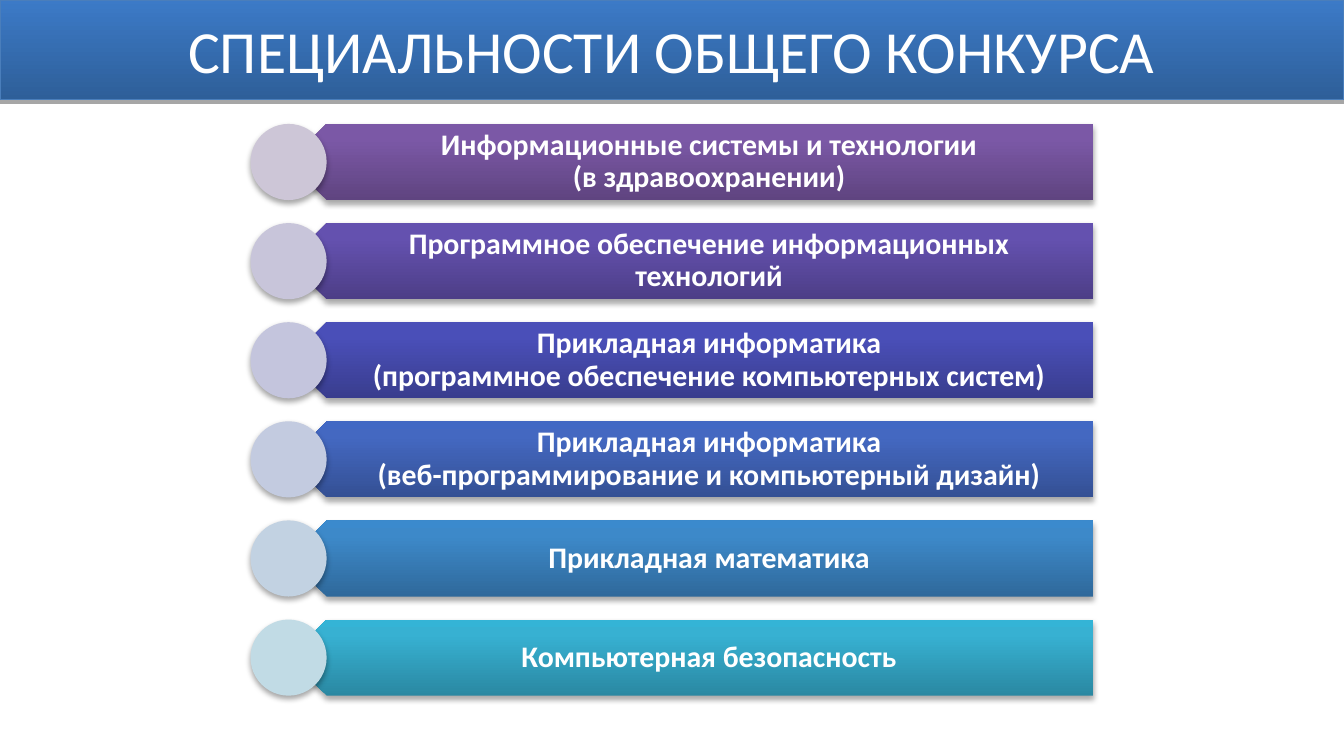
from copy import deepcopy
from dataclasses import dataclass

from lxml import etree
from pptx import Presentation
from pptx.dml.color import RGBColor
from pptx.enum.shapes import MSO_SHAPE
from pptx.enum.text import MSO_ANCHOR, MSO_AUTO_SIZE, PP_ALIGN
from pptx.oxml.ns import qn
from pptx.util import Pt

PENTAGON = MSO_SHAPE.PENTAGON
OVAL = MSO_SHAPE.OVAL
MIDDLE = MSO_ANCHOR.MIDDLE
CENTER = PP_ALIGN.CENTER
NO_AUTOFIT = MSO_AUTO_SIZE.NONE

SLIDE_WIDTH, SLIDE_HEIGHT = 720, 405
HEADER_HEIGHT = 53.5
FIRST_TOP, ROW_PITCH, ROW_HEIGHT = 66.4, 53.1, 40.8
CIRCLE_LEFT = 134.2
BAR_LEFT, BAR_RIGHT = CIRCLE_LEFT + ROW_HEIGHT / 2, 585.5
LABEL_LEFT = BAR_LEFT + ROW_HEIGHT / 4


@dataclass(frozen=True)
class Specialty:
    label: str
    gradient: tuple[tuple[int, str], ...]
    circle: str


SPECIALTIES = [
    Specialty("Информационные системы и технологии\n(в здравоохранении)",
              ((0, "5F4480"), (80, "7B58A6"), (100, "7C57A8")), "CDC6D7"),
    Specialty("Программное обеспечение информационных технологий",
              ((0, "4D3E87"), (80, "6451AF"), (100, "6450B2")), "C8C5DA"),
    Specialty("Прикладная информатика\n(программное обеспечение компьютерных систем)",
              ((0, "393D8E"), (80, "4A4FB8"), (100, "484EBB")), "C4C5DD"),
    Specialty("Прикладная информатика\n(веб-программирование и компьютерный дизайн)",
              ((0, "345094"), (80, "4468C1"), (100, "4168C4")), "C3CBE0"),
    Specialty("Прикладная математика",
              ((0, "2F699B"), (80, "3D89C9"), (100, "3B8ACD")), "C2D2E2"),
    Specialty("Компьютерная безопасность",
              ((0, "2A88A2"), (80, "37B1D2"), (100, "34B4D6")), "C1DBE5"),
]


def rgb(color: str) -> RGBColor:
    return RGBColor.from_string(color)


def place(shape, left: float, top: float, width: float, height: float) -> None:
    shape.left, shape.top = Pt(left), Pt(top)
    shape.width, shape.height = Pt(width), Pt(height)


def add_child(parent, tag: str, **attributes):
    return etree.SubElement(parent, qn(tag), {k: str(v) for k, v in attributes.items()})


def fill_gradient(shape, stops: tuple[tuple[int, str], ...]) -> None:
    """Fill from bottom to top, whatever the rotation of the shape."""
    shape.fill.solid()
    solid = shape.fill._xPr.find(qn("a:solidFill"))
    gradient = etree.Element(qn("a:gradFill"), rotWithShape="0")
    stop_list = add_child(gradient, "a:gsLst")
    for percent, color in stops:
        stop = add_child(stop_list, "a:gs", pos=percent * 1000)
        add_child(stop, "a:srgbClr", val=color)
    add_child(gradient, "a:lin", ang=270 * 60000, scaled=0)
    solid.getparent().replace(solid, gradient)


def cast_shadow(shape, blur: float) -> None:
    shape.shadow.inherit = False
    effects = shape._element.spPr.find(qn("a:effectLst"))
    shadow = add_child(effects, "a:outerShdw", blurRad=Pt(blur), dist=Pt(1.8),
                       dir=90 * 60000, rotWithShape=0)
    color = add_child(shadow, "a:srgbClr", val="000000")
    add_child(color, "a:alpha", val=35000)


def write(shape, text: str, *, size: float, bold: bool = False, spacing: float = 1.0,
          insets: tuple[float, float, float, float] = (7.2, 3.6, 7.2, 3.6)) -> None:
    frame = shape.text_frame
    frame.word_wrap = True
    frame.auto_size = NO_AUTOFIT
    frame.vertical_anchor = MIDDLE
    (frame.margin_left, frame.margin_top,
     frame.margin_right, frame.margin_bottom) = map(Pt, insets)
    paragraph = frame.paragraphs[0]
    paragraph.text = text.replace("\n", "\v")
    paragraph.alignment = CENTER
    paragraph.line_spacing = spacing
    for run in paragraph.runs:
        run.font.name = "Calibri"
        run.font.size = Pt(size)
        run.font.bold = bold
        run.font.color.rgb = rgb("FFFFFF")
    for line_break in paragraph._p.findall(qn("a:br")):
        line_break.append(deepcopy(paragraph.runs[0].font._element))


def draw_header(slide, text: str) -> None:
    header = slide.shapes.title
    place(header, 0, 0, SLIDE_WIDTH, HEADER_HEIGHT)
    fill_gradient(header, ((0, "2E5F99"), (100, "3C7AC7")))
    header.line.color.rgb = rgb("4A7EBB")
    header.line.width = Pt(0.75)
    cast_shadow(header, blur=0)
    write(header, text, size=32)


def draw_specialty(slide, specialty: Specialty, top: float) -> None:
    shapes = slide.shapes
    bar = shapes.add_shape(PENTAGON, Pt(BAR_LEFT), Pt(top),
                           Pt(BAR_RIGHT - BAR_LEFT), Pt(ROW_HEIGHT))
    bar.rotation = 180
    fill_gradient(bar, specialty.gradient)

    label = shapes.add_textbox(Pt(LABEL_LEFT), Pt(top),
                               Pt(BAR_RIGHT - LABEL_LEFT), Pt(ROW_HEIGHT))
    write(label, specialty.label, size=16, bold=True, spacing=0.9, insets=(18, 5, 8.6, 5))

    circle = shapes.add_shape(OVAL, Pt(CIRCLE_LEFT), Pt(top), Pt(ROW_HEIGHT), Pt(ROW_HEIGHT))
    circle.fill.solid()
    circle.fill.fore_color.rgb = rgb(specialty.circle)

    for shape in (bar, circle):
        shape.line.fill.background()
        cast_shadow(shape, blur=3.1)


def main() -> None:
    presentation = Presentation()
    presentation.slide_width, presentation.slide_height = Pt(SLIDE_WIDTH), Pt(SLIDE_HEIGHT)
    slide = presentation.slides.add_slide(presentation.slide_layouts[5])
    draw_header(slide, "СПЕЦИАЛЬНОСТИ ОБЩЕГО КОНКУРСА")
    for row, specialty in enumerate(SPECIALTIES):
        draw_specialty(slide, specialty, FIRST_TOP + row * ROW_PITCH)
    presentation.save("out.pptx")


if __name__ == "__main__":
    main()
